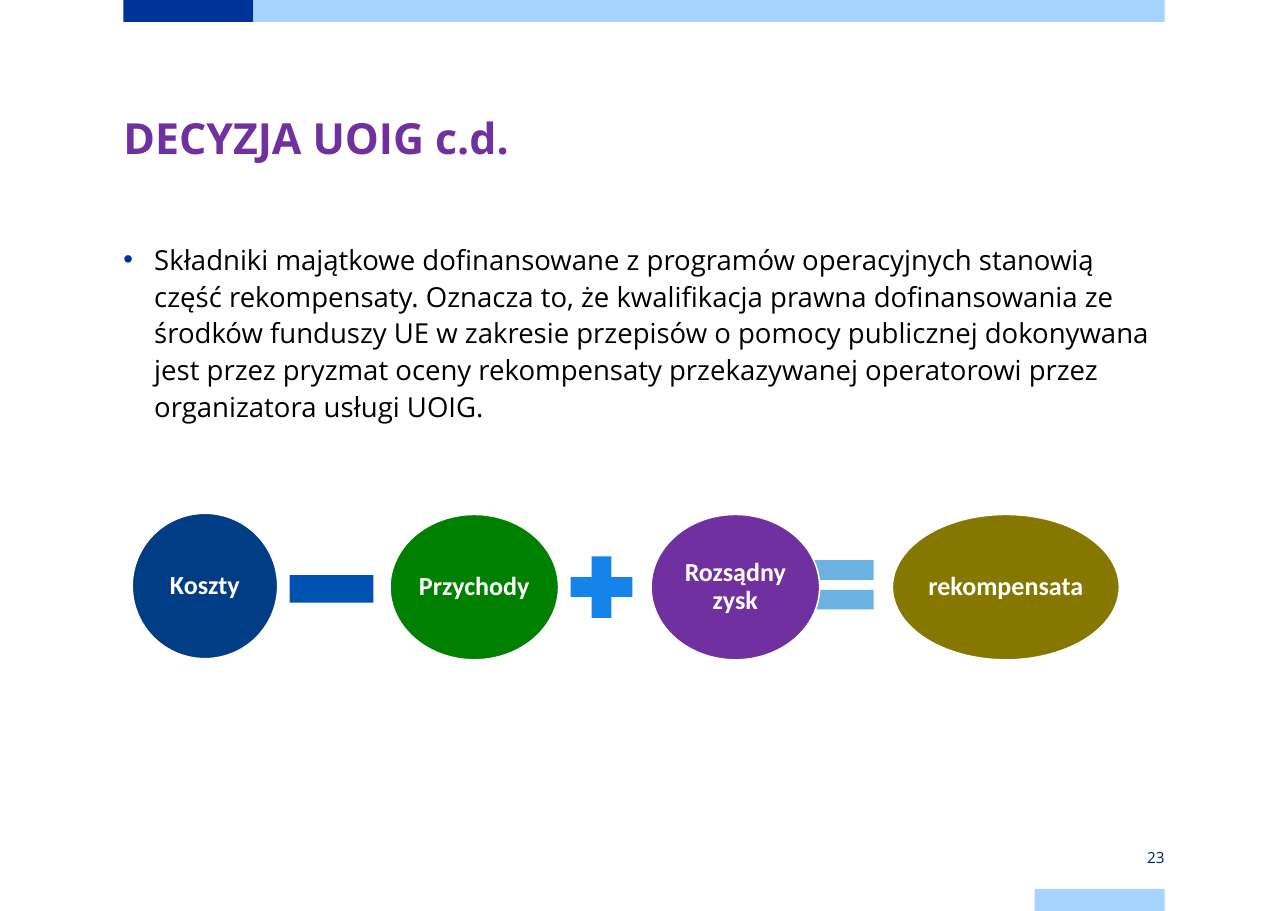
import pptx
import pptx.dml.color
import pptx.enum.shapes
import pptx.enum.text
import pptx.oxml
import pptx.oxml.ns
import pptx.util

Inches = pptx.util.Inches
Pt = pptx.util.Pt
RGBColor = pptx.dml.color.RGBColor
SHAPE = pptx.enum.shapes.MSO_SHAPE
ALIGN = pptx.enum.text.PP_ALIGN
ANCHOR = pptx.enum.text.MSO_ANCHOR

NAVY = RGBColor(0x00, 0x33, 0x99)
PALE_BLUE = RGBColor(0xA6, 0xD3, 0xFF)
PURPLE = RGBColor(0x70, 0x30, 0xA0)
BLACK = RGBColor(0x00, 0x00, 0x00)
WHITE = RGBColor(0xFF, 0xFF, 0xFF)
NUMBER_BLUE = RGBColor(0x00, 0x20, 0x73)
COST_BLUE = RGBColor(0x00, 0x3D, 0x84)
MINUS_BLUE = RGBColor(0x00, 0x51, 0xB0)
GREEN = RGBColor(0x00, 0x80, 0x00)
PLUS_BLUE = RGBColor(0x15, 0x84, 0xEA)
EQUAL_BLUE = RGBColor(0x6B, 0xB1, 0xE2)
OLIVE = RGBColor(0x85, 0x77, 0x00)

LEFT, WIDTH = 1.12, 9.45
BAR_WIDTH, BAR_HEIGHT = 1.18, 0.2
BAR_RIGHT = LEFT + WIDTH - BAR_WIDTH
TERM_HEIGHT = 1.32
SIGN_SIZE = 0.76

TITLE = "DECYZJA UOIG c.d."
BODY = (
    "Składniki majątkowe dofinansowane z programów operacyjnych stanowią "
    "część rekompensaty. Oznacza to, że kwalifikacja prawna dofinansowania "
    "ze środków funduszy UE w zakresie przepisów o pomocy publicznej "
    "dokonywana jest przez pryzmat oceny rekompensaty przekazywanej "
    "operatorowi przez organizatora usługi UOIG."
)


def set_format(target, values):
    for attribute, value in values.items():
        setattr(target, attribute, value)


def write(frame, text, color, margin, font, paragraph, anchor=ANCHOR.TOP):
    set_format(frame, {
        "word_wrap": True,
        "vertical_anchor": anchor,
        "margin_left": margin,
        "margin_right": margin,
        "margin_top": margin,
        "margin_bottom": margin,
    })
    line = frame.paragraphs[0]
    line.text = text
    set_format(line, paragraph)
    set_format(line.runs[0].font, font)
    line.runs[0].font.color.rgb = color
    return line


def add_text(slide, box, text, color, font, paragraph, anchor=ANCHOR.TOP):
    frame = slide.shapes.add_textbox(*map(Inches, box)).text_frame
    return write(frame, text, color, 0, {"name": "Open Sans", **font},
                 paragraph, anchor)


def add_bullet(paragraph, color, indent):
    properties = paragraph._p.get_or_add_pPr()
    properties.set("marL", str(Inches(indent)))
    properties.set("indent", str(Inches(-indent)))
    namespace = pptx.oxml.ns.nsdecls("a")
    for element in (
        f'<a:buClr {namespace}><a:srgbClr val="{color}"/></a:buClr>',
        f'<a:buFont {namespace} typeface="Arial"/>',
        f'<a:buChar {namespace} char="•"/>',
    ):
        properties.append(pptx.oxml.parse_xml(element))


def add_filled(slide, kind, box, color):
    shape = slide.shapes.add_shape(kind, *map(Inches, box))
    shape.shadow.inherit = False
    shape.fill.solid()
    shape.fill.fore_color.rgb = color
    shape.line.fill.background()
    return shape


def add_term(slide, text, left, top, width, color):
    term = add_filled(slide, SHAPE.OVAL, (left, top, width, TERM_HEIGHT), color)
    term.line.color.rgb = WHITE
    term.line.width = Pt(1)
    write(term.text_frame, text, WHITE, Inches(0.02),
          {"name": "Calibri", "size": Pt(17), "bold": True},
          {"alignment": ALIGN.CENTER, "line_spacing": 0.9}, ANCHOR.MIDDLE)


def add_bars(slide):
    for left, top, width, color in (
        (LEFT, 0, BAR_WIDTH, NAVY),
        (LEFT + BAR_WIDTH, 0, WIDTH - BAR_WIDTH, PALE_BLUE),
        (BAR_RIGHT, 8.07, BAR_WIDTH, PALE_BLUE),
    ):
        add_filled(slide, SHAPE.RECTANGLE, (left, top, width, BAR_HEIGHT), color)


def add_equation(slide):
    for kind, left, top, height, color in (
        (SHAPE.RECTANGLE, 2.63, 5.22, 0.25, MINUS_BLUE),
        (SHAPE.MATH_PLUS, 5.08, 4.95, SIGN_SIZE, PLUS_BLUE),
        (SHAPE.MATH_EQUAL, 7.27, 4.93, SIGN_SIZE, EQUAL_BLUE),
    ):
        add_filled(slide, kind, (left, top, SIGN_SIZE, height), color)
    for text, left, top, width, color in (
        ("Koszty", 1.2, 4.66, 1.32, COST_BLUE),
        ("Przychody", 3.54, 4.67, 1.53, GREEN),
        ("Rozsądny zysk", 5.91, 4.67, 1.53, PURPLE),
        ("rekompensata", 8.1, 4.67, 2.06, OLIVE),
    ):
        add_term(slide, text, left, top, width, color)


def main():
    deck = pptx.Presentation()
    set_format(deck, {"slide_width": Inches(11.69),
                      "slide_height": Inches(8.27)})
    slide = deck.slides.add_slide(deck.slide_layouts[6])
    add_bars(slide)
    add_text(slide, (LEFT, 0.98, WIDTH, 1.18), TITLE, PURPLE,
             {"size": Pt(28), "bold": True}, {"line_spacing": Pt(36)})
    statement = add_text(slide, (LEFT, 2.17, WIDTH, 5.12), BODY, BLACK,
                         {"size": Pt(18)}, {"line_spacing": Pt(24)})
    add_bullet(statement, NAVY, 0.28)
    add_text(slide, (BAR_RIGHT, 7.68, BAR_WIDTH, 0.2), "23", NUMBER_BLUE,
             {"size": Pt(10)}, {"alignment": ALIGN.RIGHT}, ANCHOR.MIDDLE)
    add_equation(slide)
    deck.save("out.pptx")


if __name__ == "__main__":
    main()
